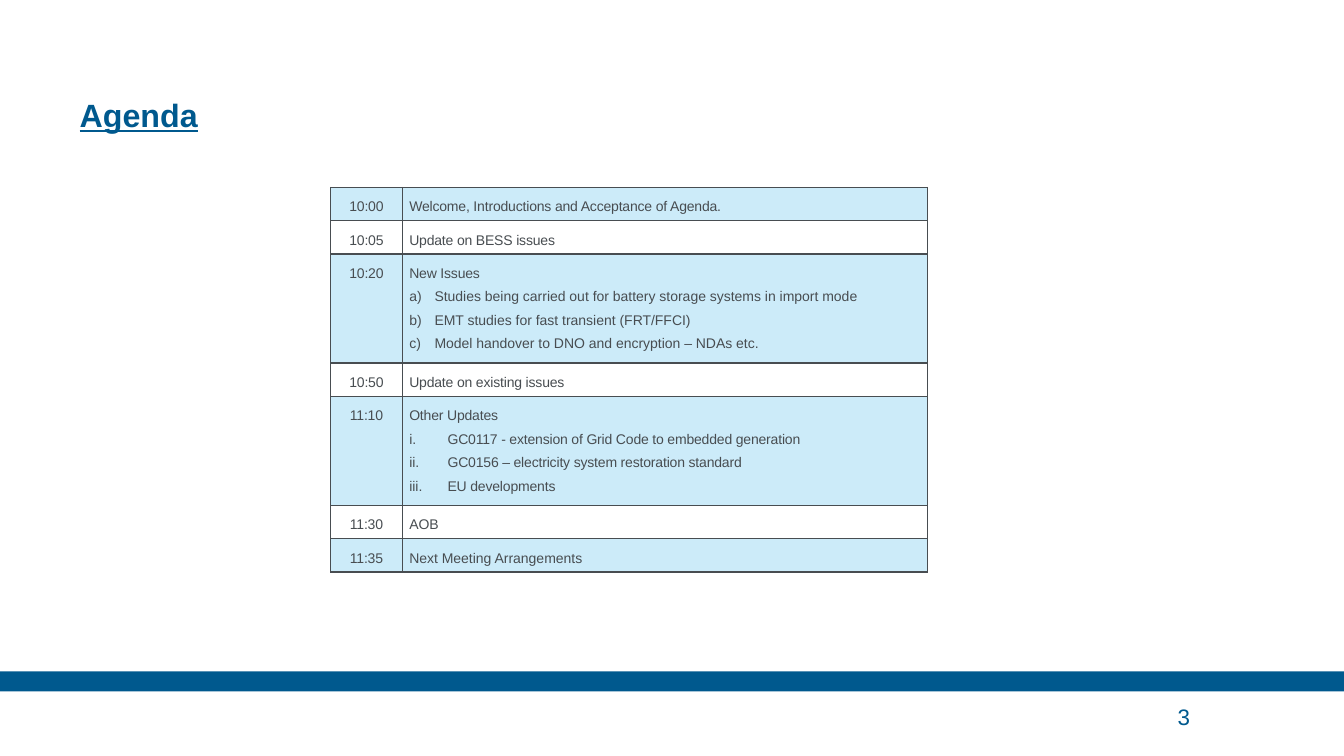
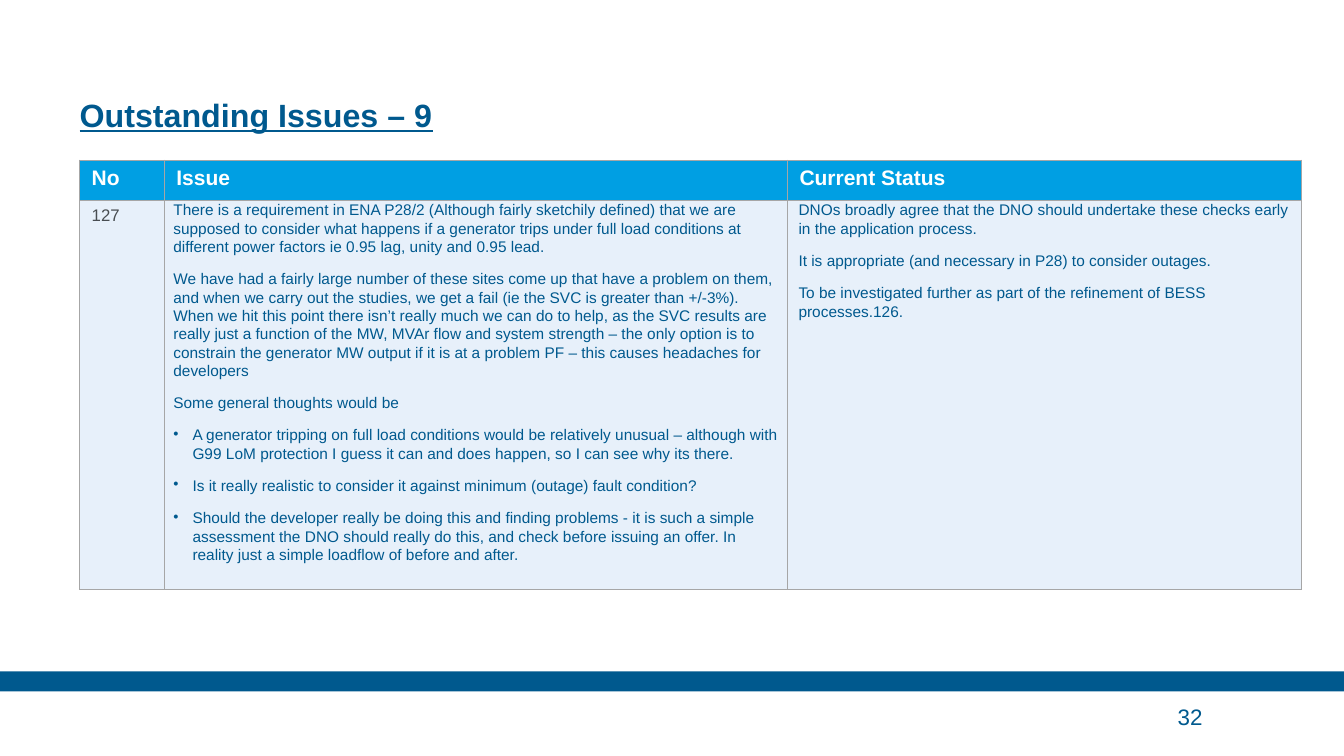
from pptx import Presentation
from pptx.util import Inches, Pt
from pptx.dml.color import RGBColor
from pptx.enum.shapes import MSO_SHAPE
from pptx.enum.text import MSO_ANCHOR, PP_ALIGN
from lxml.etree import SubElement
from pptx.oxml.ns import qn

COLORS = {
    "navy": "00598E", "sky": "009FE3", "pale": "E7F0FA",
    "text": "484D51", "grid": "A6A6A6", "white": "FFFFFF",
}
SIDES = ("left", "top", "right", "bottom")
LETTERS = ("buAutoNum", {"type": "alphaLcParenR"}, 0.25)
ROMANS = ("buAutoNum", {"type": "romanLcPeriod"}, 0.38)
DOT = ("buChar", {"char": "•"}, 0.19)


def put(tf, items, color, font, para, indent=0, spc=0):
    for i, (text, bullet) in enumerate(items):
        p = tf.paragraphs[0] if i == 0 else tf.add_paragraph()
        pPr = p._p.get_or_add_pPr()
        hang = 0
        if bullet:
            tag, attrs, hang = bullet
            SubElement(pPr, qn("a:" + tag), attrs)
        pPr.set("marL", str(Inches(indent + hang)))
        pPr.set("indent", str(Inches(-hang)))
        for name, value in para.items():
            if i or name != "space_before":
                setattr(p, name, value)
        r = p.add_run()
        r.text = text
        for name, value in {"name": "Arial", **font}.items():
            setattr(r.font, name, value)
        r.font.color.rgb = RGBColor.from_string(COLORS[color])
        if spc:
            r._r.get_or_add_rPr().set("spc", str(spc))


def style_cell(cell, margins, border, fill=None, alpha=None):
    for side, value in zip(SIDES, margins * 2):
        setattr(cell, "margin_" + side, Inches(value))
    tcPr = cell._tc.get_or_add_tcPr()
    for tag in ("lnL", "lnR", "lnT", "lnB"):
        ln = SubElement(tcPr, qn("a:" + tag), w=str(Pt(1)))
        solid = SubElement(ln, qn("a:solidFill"))
        SubElement(solid, qn("a:srgbClr"), val=COLORS[border])
    if not fill:
        cell.fill.background()
        return
    cell.fill.solid()
    cell.fill.fore_color.rgb = RGBColor.from_string(COLORS[fill])
    if alpha:
        clr = tcPr.find(qn("a:solidFill")).find(qn("a:srgbClr"))
        SubElement(clr, qn("a:alpha"), val=str(alpha * 1000))


prs = Presentation()
prs.slide_width = Inches(13.33)
prs.slide_height = Inches(7.5)

pages = [
    ("Agenda", "3", (3.28, 1.86), (0.71, 5.21),
     (0.31, 0.31, 1.01, 0.31, 1.01, 0.31, 0.31)),
    ("Outstanding Issues – 9", "32", (0.79, 1.59), (0.84, 6.18, 5.1), (0.4, 3.86)),
]
tables = []
for title, number, (left, top), widths, heights in pages:
    s = prs.slides.add_slide(prs.slide_layouts[6])
    band = s.shapes.add_shape(MSO_SHAPE.RECTANGLE, 0, Inches(6.66), prs.slide_width, Inches(0.2))
    band.shadow.inherit = False
    band.fill.solid()
    band.fill.fore_color.rgb = RGBColor.from_string(COLORS["navy"])
    band.line.fill.background()

    labels = [
        (title, (0.79, 0.31, 9.84, 1.02), MSO_ANCHOR.BOTTOM,
         {"size": Pt(23), "bold": True, "underline": True}, {"line_spacing": Pt(30)}),
        (number, (11.68, 6.91, 1.23, 0.39), MSO_ANCHOR.MIDDLE, {"size": Pt(16)}, {}),
    ]
    for text, box, anchor, font, para in labels:
        tf = s.shapes.add_textbox(*map(Inches, box)).text_frame
        tf.word_wrap = True
        tf.vertical_anchor = anchor
        for side in SIDES:
            setattr(tf, "margin_" + side, 0)
        put(tf, [(text, None)], "navy", font, para)

    frame = s.shapes.add_table(len(heights), len(widths), Inches(left), Inches(top),
                               Inches(sum(widths)), Inches(sum(heights)))
    table = frame.table
    table.first_row = len(tables) == 1
    table.horz_banding = False
    for col, width in zip(table.columns, widths):
        col.width = Inches(width)
    for row, height in zip(table.rows, heights):
        row.height = Inches(height)
    tables.append(table)

agenda, issues = tables

agenda_rows = [
    ("10:00", "Welcome, Introductions and Acceptance of Agenda.", -10, None, 0, []),
    ("10:05", "Update on BESS issues", -10, None, 0, []),
    ("10:20", "New Issues", -10, LETTERS, 0, [
        "Studies being carried out for battery storage systems in import mode",
        "EMT studies for fast transient (FRT/FFCI)",
        "Model handover to DNO and encryption – NDAs etc.",
    ]),
    ("10:50", "Update on existing issues", -10, None, 0, []),
    ("11:10", "Other Updates", -10, ROMANS, -10, [
        "GC0117 - extension of Grid Code to embedded generation",
        "GC0156 – electricity system restoration standard",
        "EU developments",
    ]),
    ("11:30", "AOB", 0, None, 0, []),
    ("11:35", "Next Meeting Arrangements", 0, None, 0, []),
]
agenda_font = {"size": Pt(10)}
agenda_para = {"line_spacing": 1.5}
for i, (time, topic, spc, bullet, sub_spc, subs) in enumerate(agenda_rows):
    time_cell, topic_cell = agenda.cell(i, 0), agenda.cell(i, 1)
    for cell in (time_cell, topic_cell):
        style_cell(cell, (0.07, 0.04), "text", None if i % 2 else "sky", 20)
    put(time_cell.text_frame, [(time, None)], "text", agenda_font,
        {**agenda_para, "alignment": PP_ALIGN.CENTER}, spc=-10)
    items = [(topic, None)] + [(sub, bullet) for sub in subs]
    put(topic_cell.text_frame, items, "text", agenda_font, agenda_para, spc=spc or sub_spc)
    for p in topic_cell.text_frame.paragraphs[1:]:
        p.runs[0]._r.get_or_add_rPr().set("spc", str(sub_spc))

for i, heading in enumerate(("No", "Issue", "Current Status")):
    cell = issues.cell(0, i)
    style_cell(cell, (0.12, 0.06), "grid", "sky")
    put(cell.text_frame, [(heading, None)], "white", {"size": Pt(15), "bold": True}, {})

number_cell = issues.cell(1, 0)
style_cell(number_cell, (0.12, 0.06), "grid", "pale")
put(number_cell.text_frame, [("127", None)], "text", {"size": Pt(12)}, {})

issue_items = [
    ("There is a requirement in ENA P28/2 (Although fairly sketchily defined) that we are "
     "supposed to consider what happens if a generator trips under full load conditions at "
     "different power factors ie 0.95 lag, unity and 0.95 lead.", None),
    ("We have had a fairly large number of these sites come up that have a problem on them, "
     "and when we carry out the studies, we get a fail (ie the SVC is greater than +/-3%). "
     "When we hit this point there isn’t really much we can do to help, as the SVC results are "
     "really just a function of the MW, MVAr flow and system strength – the only option is to "
     "constrain the generator MW output if it is at a problem PF – this causes headaches for "
     "developers", None),
    ("Some general thoughts would be", None),
    ("A generator tripping on full load conditions would be relatively unusual – although with "
     "G99 LoM protection I guess it can and does happen, so I can see why its there.", DOT),
    ("Is it really realistic to consider it against minimum (outage) fault condition?", DOT),
    ("Should the developer really be doing this and finding problems - it is such a simple "
     "assessment the DNO should really do this, and check before issuing an offer. In "
     "reality just a simple loadflow of before and after.", DOT),
]
status_items = [
    ("DNOs broadly agree that the DNO should undertake these checks early "
     "in the application process.", None),
    ("It is appropriate (and necessary in P28) to consider outages.", None),
    ("To be investigated further as part of the refinement of BESS processes.126.", None),
]
body_para = {"line_spacing": 1.07, "space_before": Pt(5), "space_after": Pt(5)}
for col, items, indent in ((1, issue_items, 0.02), (2, status_items, 0.04)):
    cell = issues.cell(1, col)
    style_cell(cell, (0.07, 0), "grid", "pale")
    put(cell.text_frame, items, "navy", {"size": Pt(11)}, body_para, indent)

prs.save("out.pptx")
